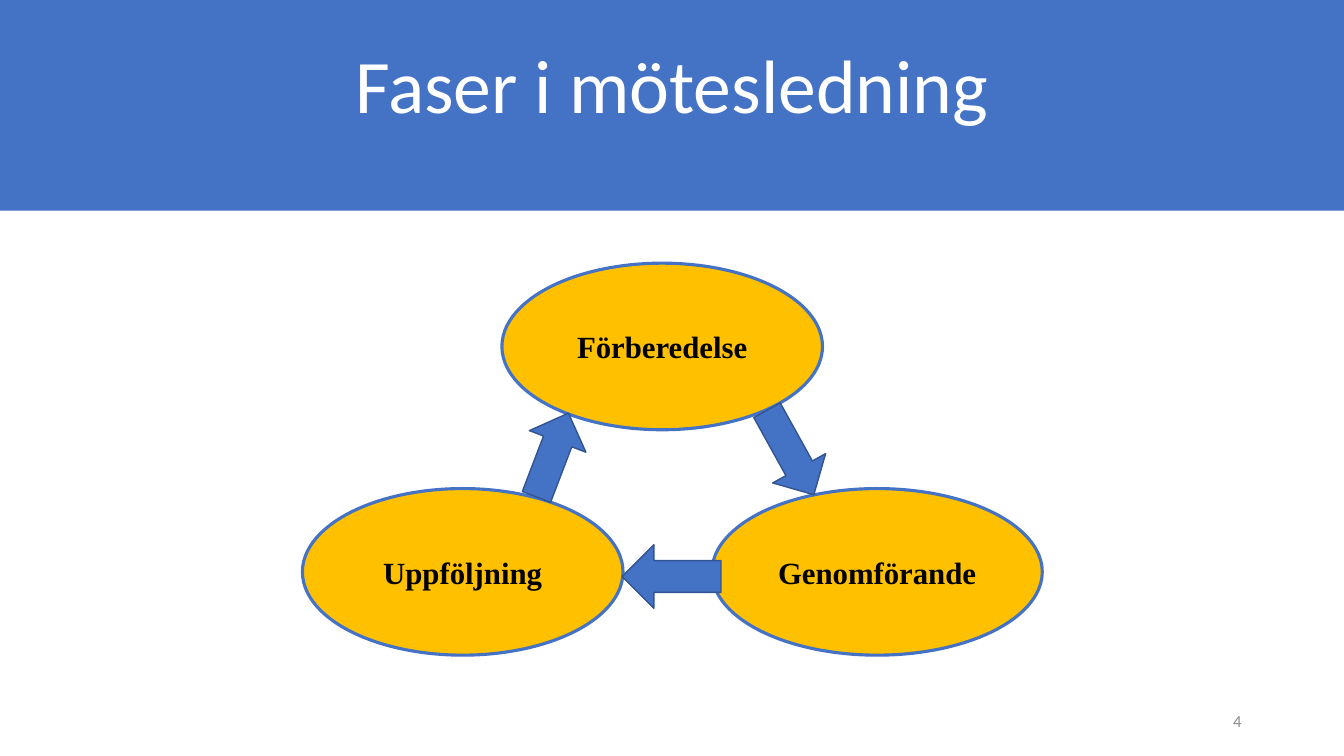
from pptx import Presentation
from pptx.dml.color import RGBColor
from pptx.enum import shapes, text
from pptx.util import Pt

BLUE = RGBColor(0x44, 0x72, 0xC4)
DARK_BLUE = RGBColor(0x32, 0x54, 0x91)
GOLD = RGBColor(0xFF, 0xC0, 0x00)
GREY = RGBColor(0x8C, 0x8C, 0x8C)
WHITE = RGBColor(0xFF, 0xFF, 0xFF)
BLACK = RGBColor(0, 0, 0)

PRESET = shapes.MSO_SHAPE
ALIGN = text.PP_ALIGN
ANCHOR = text.MSO_ANCHOR


class SlideBuilder:
    body_font = "Calibri"
    phase_font = "Times New Roman"

    def __init__(self, slide):
        self.slide = slide

    def shape(self, preset, place, fill, line=None, weight=1, rotation=0):
        shape = self.slide.shapes.add_shape(preset, *map(Pt, place))
        shape.shadow.inherit = False
        shape.rotation = rotation
        shape.fill.solid()
        shape.fill.fore_color.rgb = fill
        if line is None:
            shape.line.fill.background()
        else:
            shape.line.color.rgb = line
            shape.line.width = Pt(weight)
        return shape

    def set_text(self, shape, words, font, size, color, align, anchor, bold=False):
        frame = shape.text_frame
        frame.text = words
        frame.word_wrap = True
        frame.vertical_anchor = anchor
        para = frame.paragraphs[0]
        para.alignment = align
        span = para.runs[0].font
        span.name, span.size, span.bold = font, Pt(size), bold
        span.color.rgb = color
        return para

    def label(self, place, words, size, color, align, anchor):
        box = self.slide.shapes.add_textbox(*map(Pt, place))
        return self.set_text(box, words, self.body_font, size, color, align, anchor)

    def phase(self, place, words):
        oval = self.shape(PRESET.OVAL, place, GOLD, BLUE, 2.25)
        self.set_text(oval, words, self.phase_font, 22, BLACK,
                      ALIGN.CENTER, ANCHOR.MIDDLE, bold=True)

    def arrow(self, place, rotation):
        self.shape(PRESET.DOWN_ARROW, place, BLUE, DARK_BLUE, 1, rotation)


def main():
    deck = Presentation()
    deck.slide_width, deck.slide_height = Pt(960), Pt(540)
    page = SlideBuilder(deck.slides.add_slide(deck.slide_layouts[6]))

    # Title band
    page.shape(PRESET.RECTANGLE, (0, 0, 960, 150.5), BLUE)
    title = page.label((66, 23, 828, 73.5), "Faser i mötesledning", 54, WHITE,
                       ALIGN.CENTER, ANCHOR.BOTTOM)
    title.line_spacing = 0.9

    # Slide number
    number = page.label((678, 500.5, 216, 28.75), "4", 12, GREY,
                        ALIGN.RIGHT, ANCHOR.MIDDLE)
    number.space_after = Pt(6)

    # Phases of the cycle
    for words, left, top, width in (
        ("Förberedelse", 358.5, 188, 229),
        ("Uppföljning", 216, 349, 229),
        ("Genomförande", 508.5, 349, 236),
    ):
        page.phase((left, top, width, 119), words)

    # Arrows between the phases
    for place, rotation in (
        ((543, 288.7, 43.2, 69), 331),
        ((457, 376.5, 45.4, 70.6), 90),
        ((373, 293, 43.2, 64), 200.9),
    ):
        page.arrow(place, rotation)

    deck.save("out.pptx")


if __name__ == "__main__":
    main()
